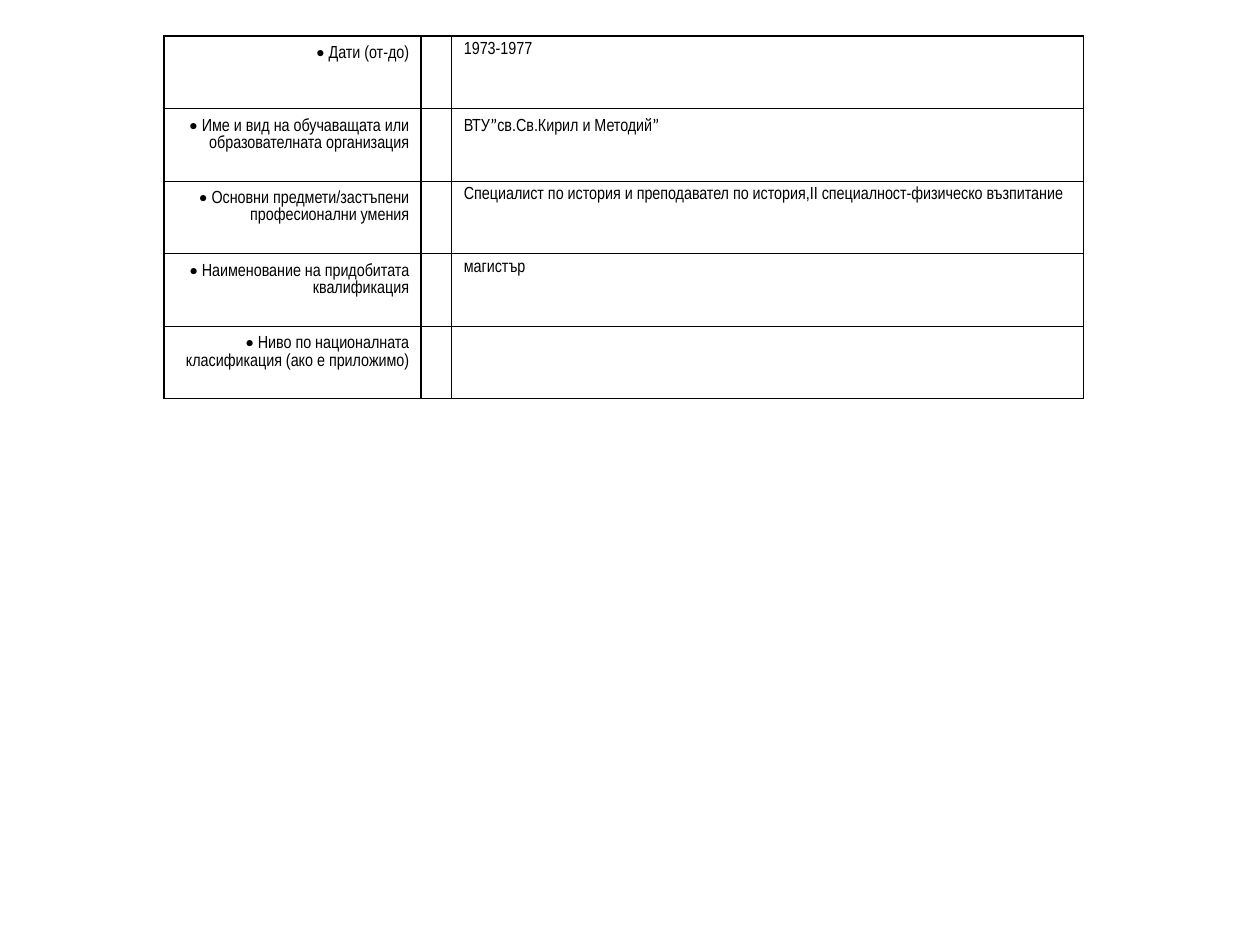
from dataclasses import dataclass

from pptx import Presentation
from pptx import util as u
from pptx.dml.color import RGBColor
from pptx.enum import text
from pptx.oxml import parse_xml
from pptx.oxml.ns import nsdecls

PX = 914400 / 126


def px(length):
    return u.Emu(round(length * PX))


@dataclass(frozen=True)
class Theme:
    ink: str = "000000"
    body_font: str = "Arial Narrow"
    symbol_font: str = "Calibri"
    symbols: str = "•”"
    size: float = 10
    border: float = 0.75
    inset_x: int = 12
    inset_y: int = 6


def split_symbols(words, symbols):
    """Split words into (piece, is_symbol); a space stays with its symbol."""
    pieces = []
    for char in words:
        last_is_symbol = bool(pieces) and pieces[-1][1]
        is_symbol = char in symbols or (char == " " and last_is_symbol)
        if pieces and last_is_symbol == is_symbol:
            pieces[-1][0] += char
        else:
            pieces.append([char, is_symbol])
    return pieces


def write(frame, words, *, theme, align=text.PP_ALIGN.LEFT):
    para = frame.paragraphs[0]
    para.alignment = align
    for piece, is_symbol in split_symbols(words, theme.symbols):
        span = para.add_run()
        span.text = piece
        span.font.name = theme.symbol_font if is_symbol else theme.body_font
        span.font.size = u.Pt(theme.size)
        span.font.color.rgb = RGBColor.from_string(theme.ink)


class Page:
    def __init__(self, slide, theme):
        self.slide = slide
        self.theme = theme

    def table(self, left, top, widths, height, rows, aligns):
        frame = self.slide.shapes.add_table(
            len(rows), len(widths), px(left), px(top), px(sum(widths)), px(height))
        table = frame.table
        table.first_row = table.horz_banding = False
        for column, width in zip(table.columns, widths):
            column.width = px(width)
        for row, entries in zip(table.rows, rows):
            row.height = px(height / len(rows))
            for cell, words, align in zip(row.cells, entries, aligns):
                self.cell(cell, words, align)

    def cell(self, cell, words, align):
        theme = self.theme
        cell.margin_left = cell.margin_right = px(theme.inset_x)
        cell.margin_top = cell.margin_bottom = px(theme.inset_y)
        properties = cell._tc.get_or_add_tcPr()
        for side in ("lnL", "lnR", "lnT", "lnB"):
            properties.append(parse_xml(
                f'<a:{side} {nsdecls("a")} w="{u.Pt(theme.border)}"><a:solidFill>'
                f'<a:srgbClr val="{theme.ink}"/></a:solidFill></a:{side}>'))
        cell.fill.background()
        write(cell.text_frame, words, theme=theme, align=align)


EDUCATION = [
    ("Дати (от-до)", "1973-1977"),
    ("Име и вид на обучаващата или образователната организация",
     "ВТУ”св.Св.Кирил и Методий”"),
    ("Основни предмети/застъпени професионални умения",
     "Специалист по история и преподавател по история,ІІ специалност-физическо възпитание"),
    ("Наименование на придобитата квалификация", "магистър"),
    ("Ниво по националната класификация (ако е приложимо)", ""),
]


def main():
    deck = Presentation()
    deck.slide_width, deck.slide_height = px(1260), px(945)
    page = Page(deck.slides.add_slide(deck.slide_layouts[6]), Theme())
    right, left = text.PP_ALIGN.RIGHT, text.PP_ALIGN.LEFT
    page.table(164, 36, widths=(257, 31, 632), height=363,
               rows=[(f"• {label}", "", value) for label, value in EDUCATION],
               aligns=(right, left, left))
    deck.save("out.pptx")


if __name__ == "__main__":
    main()
